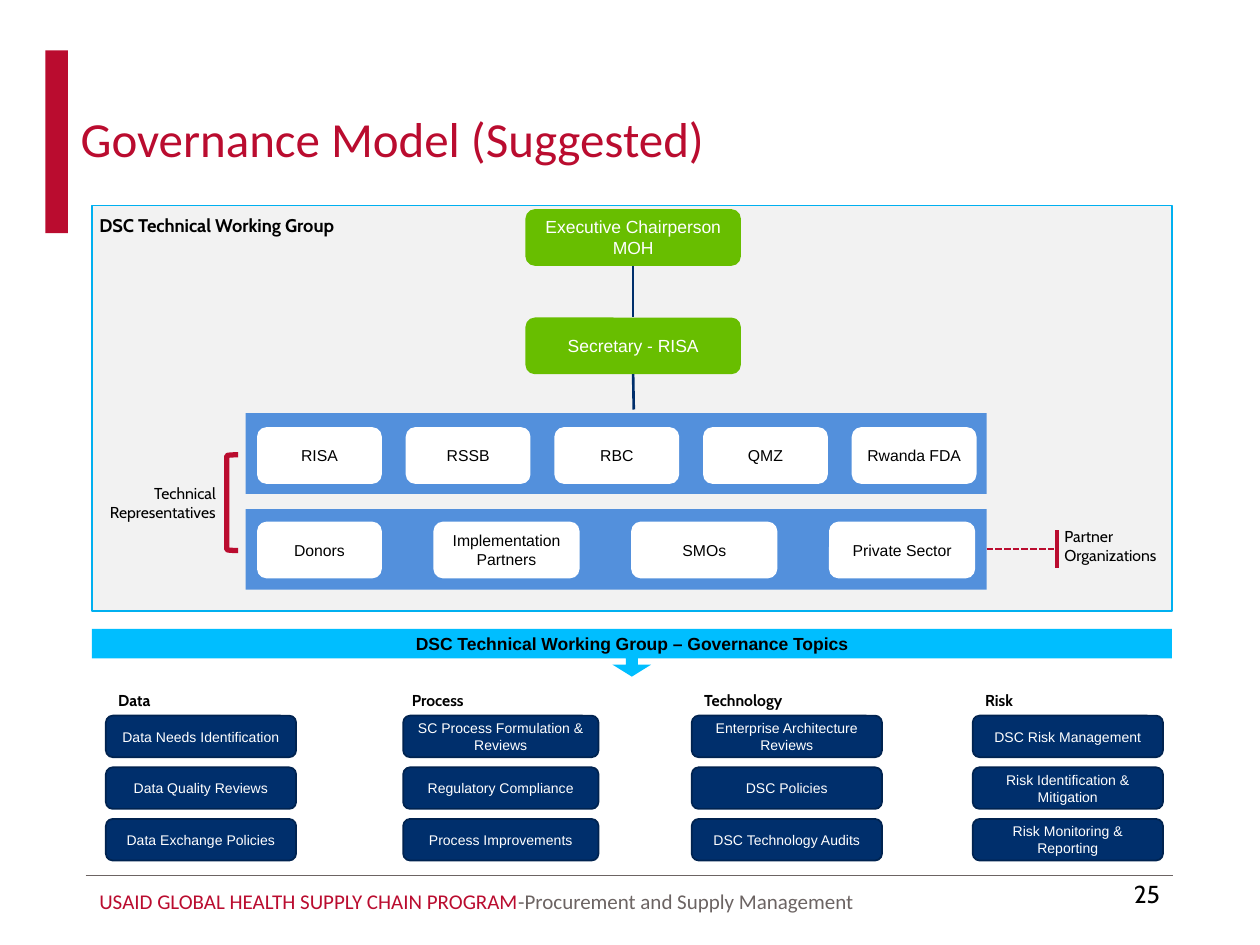
from pptx import Presentation
from pptx.dml.color import RGBColor
from pptx.enum.dml import MSO_LINE
from pptx.enum.shapes import MSO_CONNECTOR, MSO_SHAPE as SHAPE
from pptx.enum.text import MSO_ANCHOR as ANCHOR, MSO_AUTO_SIZE, PP_ALIGN as ALIGN
from pptx.oxml.ns import qn
from pptx.util import Inches, Pt

COLORS = {
    "red": "BA0C2F", "gray": "6C6463", "panel": "F2F2F2", "panel_edge": "00B0F0",
    "band": "5390DC", "navy": "002F6C", "navy_edge": "002350", "green": "68BE00",
    "cyan": "00BEFF", "white": "FFFFFF", "black": "000000",
}

TOPICS = [
    ("Data", 0.84, 1.51,
     ["Data Needs Identification", "Data Quality Reviews", "Data Exchange Policies"]),
    ("Process", 3.2, 1.55,
     ["SC Process Formulation & Reviews", "Regulatory Compliance", "Process Improvements"]),
    ("Technology", 5.49, 1.51,
     ["Enterprise Architecture Reviews", "DSC Policies", "DSC Technology Audits"]),
    ("Risk", 7.72, 1.51,
     ["DSC Risk Management", "Risk Identification & Mitigation", "Risk Monitoring & Reporting"]),
]


def rgb(name):
    return RGBColor.from_string(COLORS[name])


def write(frame, text, size=9, font="Cabin", color="black", bold=False,
          align=ALIGN.LEFT, anchor=ANCHOR.TOP, spacing=None):
    frame.word_wrap = True
    frame.auto_size = MSO_AUTO_SIZE.NONE
    frame.vertical_anchor = anchor
    paragraph = frame.paragraphs[0]
    paragraph.alignment = align
    paragraph.line_spacing = spacing
    parts = [(text, color)] if isinstance(text, str) else text
    for words, part_color in parts:
        run = paragraph.add_run()
        run.text = words
        run.font.size = Pt(size)
        run.font.name = font
        run.font.bold = bold
        run.font.color.rgb = rgb(part_color)


def add_label(slide, box, text, **style):
    label = slide.shapes.add_textbox(*map(Inches, box))
    write(label.text_frame, text, **style)


def add_block(slide, box, kind=SHAPE.RECTANGLE, fill=None, edge=None, weight=1,
              text=None, **style):
    block = slide.shapes.add_shape(kind, *map(Inches, box))
    block.shadow.inherit = False
    if fill:
        block.fill.solid()
        block.fill.fore_color.rgb = rgb(fill)
    else:
        block.fill.background()
    if edge:
        block.line.color.rgb = rgb(edge)
        block.line.width = Pt(weight)
    else:
        block.line.fill.background()
    if text:
        write(block.text_frame, text, font="Arial", align=ALIGN.CENTER,
              anchor=ANCHOR.MIDDLE, **style)
    return block


def add_line(slide, start, end, color, weight, dash=None, source=None, target=None):
    line = slide.shapes.add_connector(
        MSO_CONNECTOR.STRAIGHT, *map(Inches, (*start, *end)))
    line.line.color.rgb = rgb(color)
    line.line.width = Pt(weight)
    if dash:
        line.line.dash_style = dash
    if source:
        line.begin_connect(*source)
    if target:
        line.end_connect(*target)
    properties = line._element.spPr
    properties.append(properties.makeelement(qn("a:effectLst"), {}))


def add_members(slide, names, left, top, pitch, width):
    for index, name in enumerate(names):
        add_block(slide, (left + index * pitch, top, width, 0.45),
                  SHAPE.ROUNDED_RECTANGLE, fill="white", text=name)


def add_frame(slide):
    add_block(slide, (0.36, 0.4, 0.18, 1.45), fill="red")
    add_line(slide, (0.68, 6.95), (9.31, 6.95), "gray", 0.5)
    add_label(slide, (0.69, 7, 7.44, 0.3),
              [("USAID GLOBAL HEALTH SUPPLY CHAIN PROGRAM", "red"),
               ("-Procurement and Supply Management", "gray")],
              size=12, font="Calibri")
    add_label(slide, (8.9, 6.93, 0.41, 0.34), "25", size=14)
    title = slide.shapes.title
    title.left, title.top, title.width, title.height = map(Inches, (0.54, 0.86, 9.26, 0.53))
    write(title.text_frame, "Governance Model (Suggested)", size=28, font="Calibri",
          color="red", anchor=ANCHOR.MIDDLE, spacing=0.9)


def add_working_group(slide):
    add_block(slide, (0.73, 1.63, 8.57, 3.22), fill="panel", edge="panel_edge")
    add_label(slide, (0.69, 1.65, 2.36, 0.28), "DSC Technical Working Group",
              size=10.5, bold=True)

    chair, secretary = [
        add_block(slide, (4.17, top, 1.71, 0.45), SHAPE.ROUNDED_RECTANGLE,
                  fill="green", text=role, size=10, color="white")
        for role, top in (("Executive Chairperson MOH", 1.66), ("Secretary - RISA", 2.52))
    ]
    add_line(slide, (5.03, 2.11), (5.03, 2.52), "navy", 1.5,
             source=(chair, 2), target=(secretary, 0))
    add_line(slide, (5.03, 2.97), (5.03, 3.25), "navy", 1.5, source=(secretary, 2))

    _, partner_band = [add_block(slide, (1.95, top, 5.88, 0.64), fill="band")
                       for top in (3.28, 4.04)]
    add_members(slide, ["RISA", "RSSB", "RBC", "QMZ", "Rwanda FDA"], 2.04, 3.39, 1.18, 0.99)
    add_members(slide, ["Donors"], 2.04, 4.14, 0, 0.99)
    add_members(slide, ["Implementation Partners", "SMOs", "Private Sector"],
                3.44, 4.14, 1.57, 1.16)

    add_label(slide, (0.64, 3.79, 1.17, 0.4), "Technical Representatives", align=ALIGN.RIGHT)
    add_block(slide, (1.8, 3.61, 0.09, 0.76), SHAPE.LEFT_BRACKET, edge="red", weight=3)
    add_line(slide, (8.39, 4.21), (8.39, 4.51), "red", 2)
    add_line(slide, (7.83, 4.36), (8.39, 4.36), "red", 1.25,
             dash=MSO_LINE.SQUARE_DOT, source=(partner_band, 3))
    add_label(slide, (8.35, 4.13, 1.16, 0.4), "Partner Organizations")


def add_topics(slide):
    banner = add_block(slide, (0.73, 4.99, 8.57, 0.38), SHAPE.DOWN_ARROW_CALLOUT,
                       fill="cyan", text="DSC Technical Working Group – Governance Topics",
                       size=10, bold=True)
    for index, value in enumerate((0.25, 0.404, 0.25, 0.619)):
        banner.adjustments[index] = value
    for heading, left, width, items in TOPICS:
        heading_left = 3.17 if heading == "Process" else left
        add_label(slide, (heading_left, 5.43, 1.07, 0.25), heading, bold=True)
        for row, item in enumerate(items):
            add_block(slide, (left, 5.68 + row * 0.41, width, 0.33),
                      SHAPE.ROUNDED_RECTANGLE, fill="navy", edge="navy_edge",
                      text=item, size=8, color="white")


def main():
    deck = Presentation()
    deck.slide_width, deck.slide_height = Inches(10), Inches(7.5)
    slide = deck.slides.add_slide(deck.slide_layouts[5])
    add_frame(slide)
    add_working_group(slide)
    add_topics(slide)
    deck.save("out.pptx")


if __name__ == "__main__":
    main()
